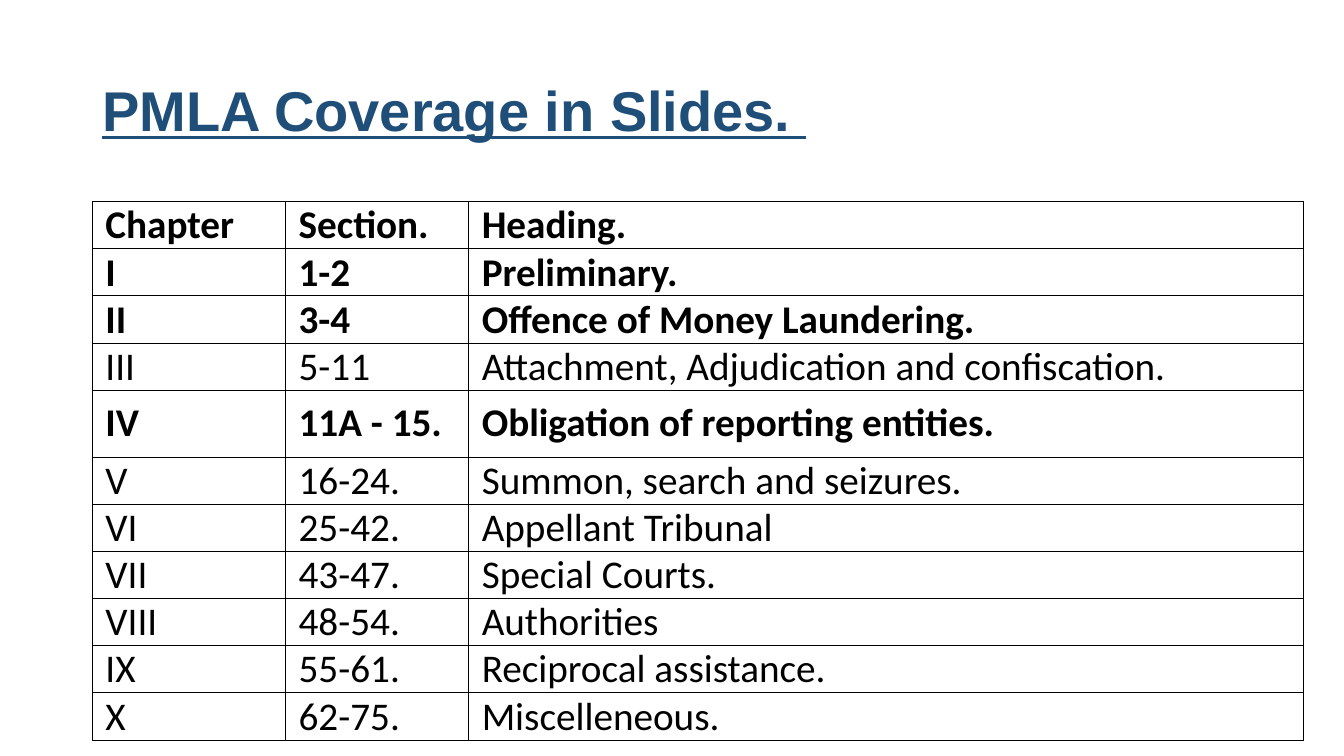
from lxml.etree import SubElement as Sub
from pptx import Presentation
from pptx.dml.color import RGBColor
from pptx.enum.text import MSO_ANCHOR as Anchor, PP_ALIGN as Align
from pptx.oxml.ns import qn
from pptx.util import Inches, Pt

BLUE = RGBColor(0x1F, 0x4E, 0x79)
BLACK = RGBColor(0, 0, 0)
WIDE, HIGH = Inches(13.33), Inches(7.5)
COLS, ROWS = 160, 90
SPANS = [23, 21.8, 99.4]
PLAIN, TALL = 5, 8
BOLD = {"Chapter", "I", "II", "IV"}
RAGGED = {"Chapter", "IV"}
DATA = [
    ("Chapter", "Section.", "Heading."),
    ("I", "1-2", "Preliminary."),
    ("II", "3-4", "Offence of Money Laundering."),
    ("III", "5-11", "Attachment, Adjudication and confiscation."),
    ("IV", "11A - 15.", "Obligation of reporting entities."),
    ("V", "16-24.", "Summon, search and seizures."),
    ("VI", "25-42.", "Appellant Tribunal"),
    ("VII", "43-47. ", "Special Courts."),
    ("VIII", "48-54. ", "Authorities"),
    ("IX", "55-61. ", "Reciprocal assistance."),
    ("X", "62-75. ", "Miscelleneous."),
]


def across(cols):
    return int(WIDE * cols / COLS)


def down(rows):
    return int(HIGH * rows / ROWS)


def write(frame, text, font="Calibri", size=28, color=BLACK, bold=False,
          under=None, align=Align.LEFT, space=None, indent=0):
    para = frame.paragraphs[0]
    para.alignment = align
    para.line_spacing = space
    para._p.get_or_add_pPr().set("marL", str(Inches(indent)))
    run = para.add_run()
    run.text = text
    face = run.font
    face.name, face.size, face.bold = font, Pt(size), bold
    face.underline = under
    face.color.rgb = color


def add_title(slide, text):
    box = slide.shapes.add_textbox(across(11), down(4.8), across(138), down(17.4))
    frame = box.text_frame
    frame.word_wrap = True
    frame.vertical_anchor = Anchor.MIDDLE
    write(frame, text, font="Arial", size=40, color=BLUE, bold=True,
          under=True, space=0.9)


def edge(cell):
    props = cell._tc.get_or_add_tcPr()
    for side in "LRTB":
        line = Sub(props, qn(f"a:ln{side}"), w=str(Pt(0.5)))
        fill = Sub(line, qn("a:solidFill"))
        Sub(fill, qn("a:srgbClr"), val=str(BLACK))


def style(cell):
    edge(cell)
    cell.fill.background()
    cell.vertical_anchor = Anchor.MIDDLE
    cell.margin_left = cell.margin_right = Inches(0.07)
    cell.margin_top = cell.margin_bottom = 0


def add_grid(slide, data):
    tall = [TALL if line[0] == "IV" else PLAIN for line in data]
    grid = slide.shapes.add_table(len(data), len(SPANS), across(11), down(24),
                                  across(sum(SPANS)), down(sum(tall))).table
    grid.first_row = grid.horz_banding = False
    for col, span in zip(grid.columns, SPANS):
        col.width = across(span)
    for row, size, line in zip(grid.rows, tall, data):
        row.height = down(size)
        for pos, (cell, text) in enumerate(zip(row.cells, line)):
            style(cell)
            just = pos == 1 and line[0] not in RAGGED
            write(cell.text_frame, text, bold=line[0] in BOLD, indent=0.06,
                  align=Align.JUSTIFY if just else Align.LEFT)


def main():
    deck = Presentation()
    deck.slide_width, deck.slide_height = WIDE, HIGH
    slide = deck.slides.add_slide(deck.slide_layouts[6])
    add_title(slide, "PMLA Coverage in Slides. ")
    add_grid(slide, DATA)
    deck.save("out.pptx")


if __name__ == "__main__":
    main()
